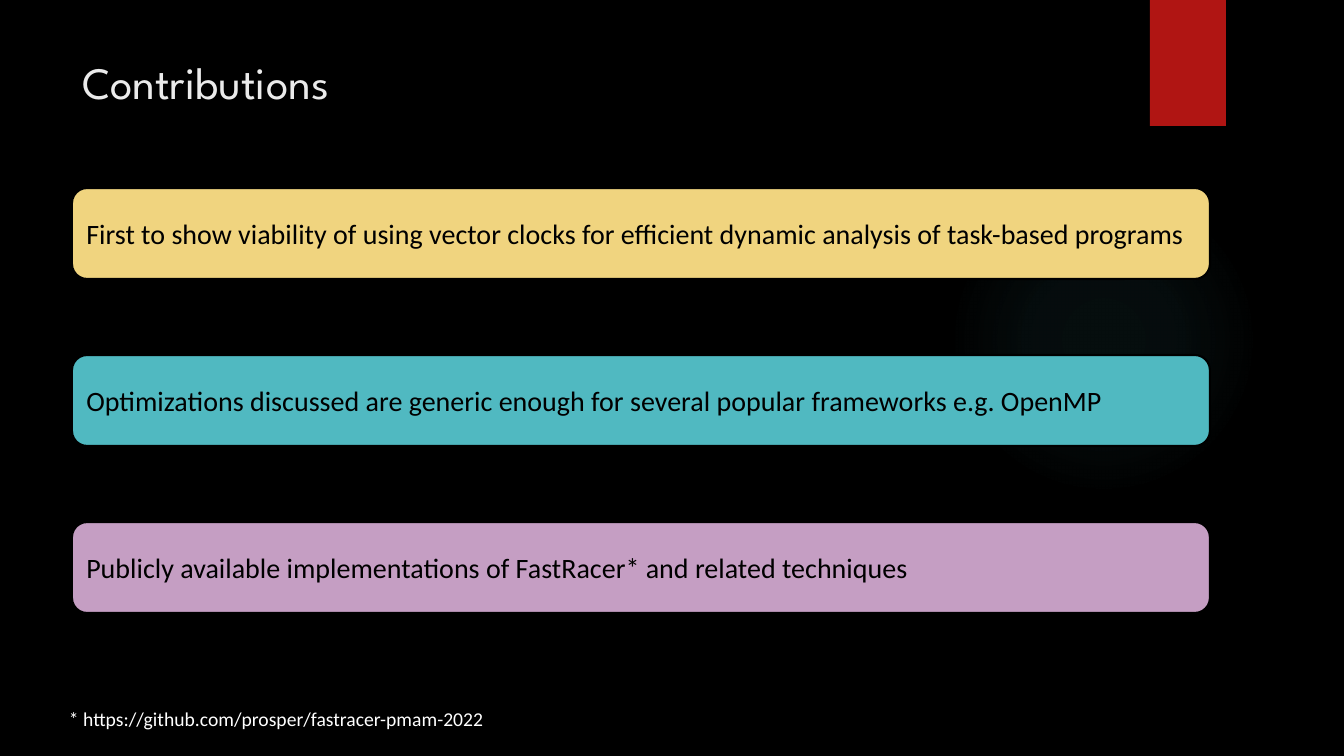
from dataclasses import dataclass

from lxml.etree import SubElement
from pptx import Presentation
from pptx.dml.color import RGBColor
from pptx.enum.shapes import MSO_SHAPE
from pptx.enum.text import MSO_ANCHOR, MSO_AUTO_SIZE, PP_ALIGN
from pptx.oxml.ns import qn
from pptx.util import Pt

EMU_PER_INCH = 914400
PX_PER_INCH = 100.8


@dataclass(frozen=True)
class Theme:
    background: str = "000000"
    ribbon: str = "B01513"
    glow: str = "50B9C1"
    heading: str = "EBEBEB"
    card_text: str = "000000"
    card_line: str = "000000"
    footnote: str = "FFFFFF"
    cards: tuple = ("F0D47F", "50B9C1", "C59EC3")
    heading_font: str = "League Spartan"
    body_font: str = "Calibri"
    heading_size: int = 32
    card_size: int = 20
    footnote_size: int = 14


THEME = Theme()

CONTRIBUTIONS = (
    "First to show viability of using vector clocks for efficient dynamic analysis of task-based programs",
    "Optimizations discussed are generic enough for several popular frameworks e.g. OpenMP",
    "Publicly available implementations of FastRacer* and related techniques",
)


def px(length):
    return round(length * EMU_PER_INCH / PX_PER_INCH)


def emu(box):
    return [px(length) for length in box]


def write(frame, text, font_name, size, color):
    frame.word_wrap = True
    paragraph = frame.paragraphs[0]
    paragraph.text = text
    paragraph.alignment = PP_ALIGN.LEFT
    paragraph.font.name = font_name
    paragraph.font.size = Pt(size)
    paragraph.font.color.rgb = RGBColor.from_string(color)


def add_plain_shape(slide, kind, box, color):
    shape = slide.shapes.add_shape(kind, *emu(box))
    shape.shadow.inherit = False
    shape.fill.solid()
    shape.fill.fore_color.rgb = RGBColor.from_string(color)
    shape.line.fill.background()
    return shape


def add_glow(slide, box):
    glow = add_plain_shape(slide, MSO_SHAPE.OVAL, box, THEME.glow)
    properties = glow.element.spPr
    solid = properties.find(qn("a:solidFill"))
    gradient = SubElement(properties, qn("a:gradFill"))
    stops = SubElement(gradient, qn("a:gsLst"))
    for position, opacity in ((0, 7), (36, 6), (69, 0)):
        stop = SubElement(stops, qn("a:gs"), pos=str(position * 1000))
        color = SubElement(stop, qn("a:srgbClr"), val=THEME.glow)
        SubElement(color, qn("a:alpha"), val=str(opacity * 1000))
    circle = SubElement(gradient, qn("a:path"), path="circle")
    SubElement(circle, qn("a:fillToRect"), l="50000", t="50000", r="50000", b="50000")
    properties.replace(solid, gradient)


def add_backdrop(slide, box):
    left, top, width, height = box
    slide.background.fill.solid()
    slide.background.fill.fore_color.rgb = RGBColor.from_string(THEME.background)
    add_glow(slide, (left + 949, top + 185, 310, 310))
    ribbon = (left + 1150, top, 76, 126)
    add_plain_shape(slide, MSO_SHAPE.RECTANGLE, ribbon, THEME.ribbon)


def fill_heading(slide, box, text):
    heading = slide.shapes.title
    heading.left, heading.top, heading.width, heading.height = emu(box)
    frame = heading.text_frame
    frame.vertical_anchor = MSO_ANCHOR.TOP
    frame.auto_size = MSO_AUTO_SIZE.NONE
    write(frame, text, THEME.heading_font, THEME.heading_size, THEME.heading)
    slide.shapes.element.append(heading.element)


def add_contribution_cards(slide, box, contributions):
    left, top, width, height = box
    card_height = 91
    pitch = (height - card_height) // (len(contributions) - 1)
    for row, (contribution, color) in enumerate(zip(contributions, THEME.cards)):
        card_box = (left, top + row * pitch, width, card_height)
        card = add_plain_shape(slide, MSO_SHAPE.ROUNDED_RECTANGLE, card_box, color)
        card.line.color.rgb = RGBColor.from_string(THEME.card_line)
        card.line.width = Pt(1.5)
        frame = card.text_frame
        frame.vertical_anchor = MSO_ANCHOR.MIDDLE
        write(frame, contribution, THEME.body_font, THEME.card_size, THEME.card_text)


def add_footnote(slide, box, text):
    frame = slide.shapes.add_textbox(*emu(box)).text_frame
    frame.auto_size = MSO_AUTO_SIZE.SHAPE_TO_FIT_TEXT
    write(frame, text, THEME.body_font, THEME.footnote_size, THEME.footnote)


def build_contributions_slide(deck, box):
    title_only = deck.slide_layouts.get_by_name("Title Only")
    slide = deck.slides.add_slide(title_only)
    left, top, width, height = box
    add_backdrop(slide, box)
    fill_heading(slide, (left + 72, top + 50, 1037, 154), "Contributions")
    add_contribution_cards(slide, (left + 72, top + 188, 1138, 425), CONTRIBUTIONS)
    add_footnote(
        slide,
        (left + 59, top + 702, 658, 34),
        "* https://github.com/prosper/fastracer-pmam-2022",
    )


def main():
    deck = Presentation()
    slide_box = (0, 0, 1344, 756)
    deck.slide_width, deck.slide_height = emu(slide_box[2:])
    build_contributions_slide(deck, slide_box)
    deck.save("out.pptx")


if __name__ == "__main__":
    main()
